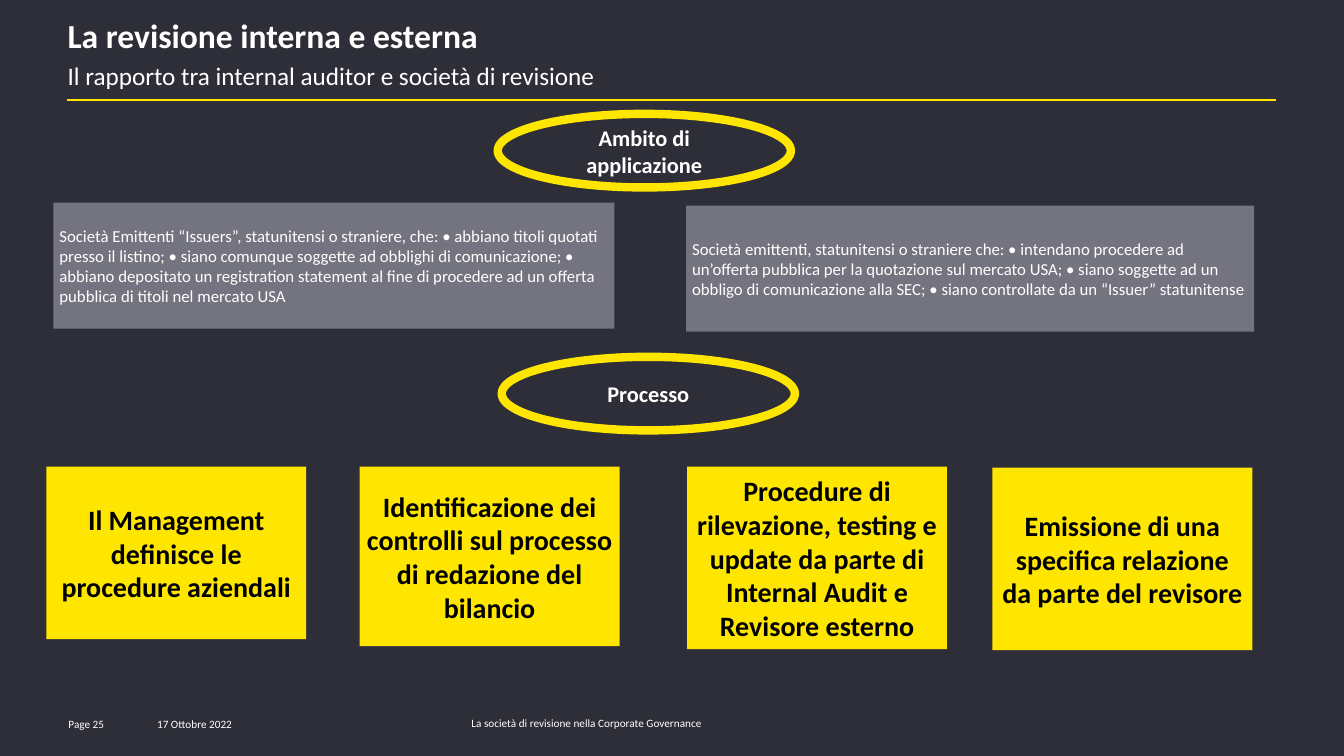
from pptx import Presentation
from pptx import util as u
from pptx.dml.color import RGBColor
from pptx.enum import shapes, text
from pptx.oxml import parse_xml
from pptx.oxml.ns import nsdecls

PX = 9144  # EMU in one px, 100 px to the inch
FONT = "Calibri"
DARK = RGBColor(0x2E, 0x2E, 0x38)
GREY = RGBColor(0x74, 0x74, 0x80)
YELLOW = RGBColor(0xFF, 0xE6, 0x00)
WHITE = RGBColor(0xFF, 0xFF, 0xFF)
BLACK = RGBColor(0x00, 0x00, 0x00)

TOP, MIDDLE = text.MSO_ANCHOR.TOP, text.MSO_ANCHOR.MIDDLE
LEFT, CENTER = text.PP_ALIGN.LEFT, text.PP_ALIGN.CENTER

SCOPES = [
    ((53, 201, 557, 125),
     "Società Emittenti “Issuers”, statunitensi o straniere, che: • abbiano titoli quotati "
     "presso il listino; • siano comunque soggette ad obblighi di comunicazione; • abbiano "
     "depositato un registration statement al fine di procedere ad un offerta pubblica di "
     "titoli nel mercato USA"),
    ((681, 204, 564, 125),
     "Società emittenti, statunitensi o straniere che: • intendano procedere ad un’offerta "
     "pubblica per la quotazione sul mercato USA; • siano soggette ad un obbligo di "
     "comunicazione alla SEC; • siano controllate da un “Issuer” statunitense"),
]
STEPS = [
    ((46, 463, 258, 171), "Il Management definisce le procedure aziendali"),
    ((357, 463, 258, 178),
     "Identificazione dei controlli sul processo di redazione del bilancio"),
    ((682, 463, 258, 181),
     "Procedure di rilevazione, testing e update da parte di Internal Audit e Revisore esterno"),
    ((985, 464, 258, 181), "Emissione di una specifica relazione da parte del revisore"),
]
HEADINGS = [
    ((494, 113, 291, 73), "Ambito di applicazione"),
    ((498, 354, 291, 73), "Processo"),
]
FOOTERS = [
    ((68, 708, 73, 20), "Page 25"),
    ((156, 708, 130, 20), "17 Ottobre 2022"),
    ((468, 707, 338, 20), "La società di revisione nella Corporate Governance"),
]


def apply(target, values):
    for name, value in values.items():
        setattr(target, name, value)


def emu(lengths):
    return [length * PX for length in lengths]


def write(box, words, size, color=WHITE, bold=False, align=LEFT, anchor=MIDDLE,
          insets=(0, 0, 0, 0), spacing=None):
    """Fill a box with one formatted paragraph; insets run left, top, right, bottom."""
    frame = box.text_frame
    left, top, right, bottom = emu(insets)
    apply(frame, dict(word_wrap=True, auto_size=text.MSO_AUTO_SIZE.NONE,
                      vertical_anchor=anchor, margin_left=left, margin_top=top,
                      margin_right=right, margin_bottom=bottom))
    para = frame.paragraphs[0]
    para.alignment = align
    if spacing:
        para.line_spacing = spacing
    span = para.add_run()
    span.text = words
    apply(span.font, dict(name=FONT, size=u.Pt(size), bold=bold))
    span.font.color.rgb = color


def add_label(page, place, words, size, **style):
    write(page.shapes.add_textbox(*emu(place)), words, size, **style)


def add_panel(page, place, fill, words, size, **style):
    box = page.shapes.add_shape(shapes.MSO_SHAPE.RECTANGLE, *emu(place))
    box.shadow.inherit = False
    box.fill.solid()
    box.fill.fore_color.rgb = fill
    box.line.fill.background()
    write(box, words, size, insets=(6, 6, 6, 6), **style)


def add_heading(page, place, words):
    oval = page.shapes.add_shape(shapes.MSO_SHAPE.OVAL, *emu(place))
    oval.shadow.inherit = False
    oval.fill.background()
    oval.line.color.rgb = YELLOW
    oval.line.width = u.Pt(6)
    write(oval, words, 16, bold=True, align=CENTER, insets=(10, 5, 10, 5))


def add_rule(page, ends):
    rule = page.shapes.add_connector(shapes.MSO_CONNECTOR.STRAIGHT, *emu(ends))
    rule.line.color.rgb = YELLOW
    rule.line.width = u.Pt(1.5)
    rule._element.spPr.append(parse_xml(f"<a:effectLst {nsdecls('a')}/>"))


def set_title(page, place, words):
    title = page.shapes.title
    apply(title, dict(zip(("left", "top", "width", "height"), emu(place))))
    write(title, words, 18, anchor=TOP, spacing=0.85)


def main():
    deck = Presentation()
    apply(deck, dict(slide_width=1334 * PX, slide_height=750 * PX))
    page = deck.slides.add_slide(deck.slide_layouts[5])
    page.background.fill.solid()
    page.background.fill.fore_color.rgb = DARK

    # Header
    add_rule(page, (67, 99, 1267, 99))
    add_label(page, (67, 17, 639, 38), "La revisione interna e esterna", 24,
              bold=True, anchor=TOP, insets=(0, 4, 0, 0), spacing=0.85)
    set_title(page, (67, 64, 1201, 65),
              "Il rapporto tra internal auditor e società di revisione")

    # Footer
    for place, words in FOOTERS:
        add_label(page, place, words, 8)

    # Process steps
    for place, words in STEPS:
        add_panel(page, place, YELLOW, words, 20, color=BLACK, bold=True, align=CENTER)

    # Scope of application
    for place, words in SCOPES:
        add_panel(page, place, GREY, words, 12)

    # Section headings
    for place, words in HEADINGS:
        add_heading(page, place, words)

    deck.save("out.pptx")


if __name__ == "__main__":
    main()
